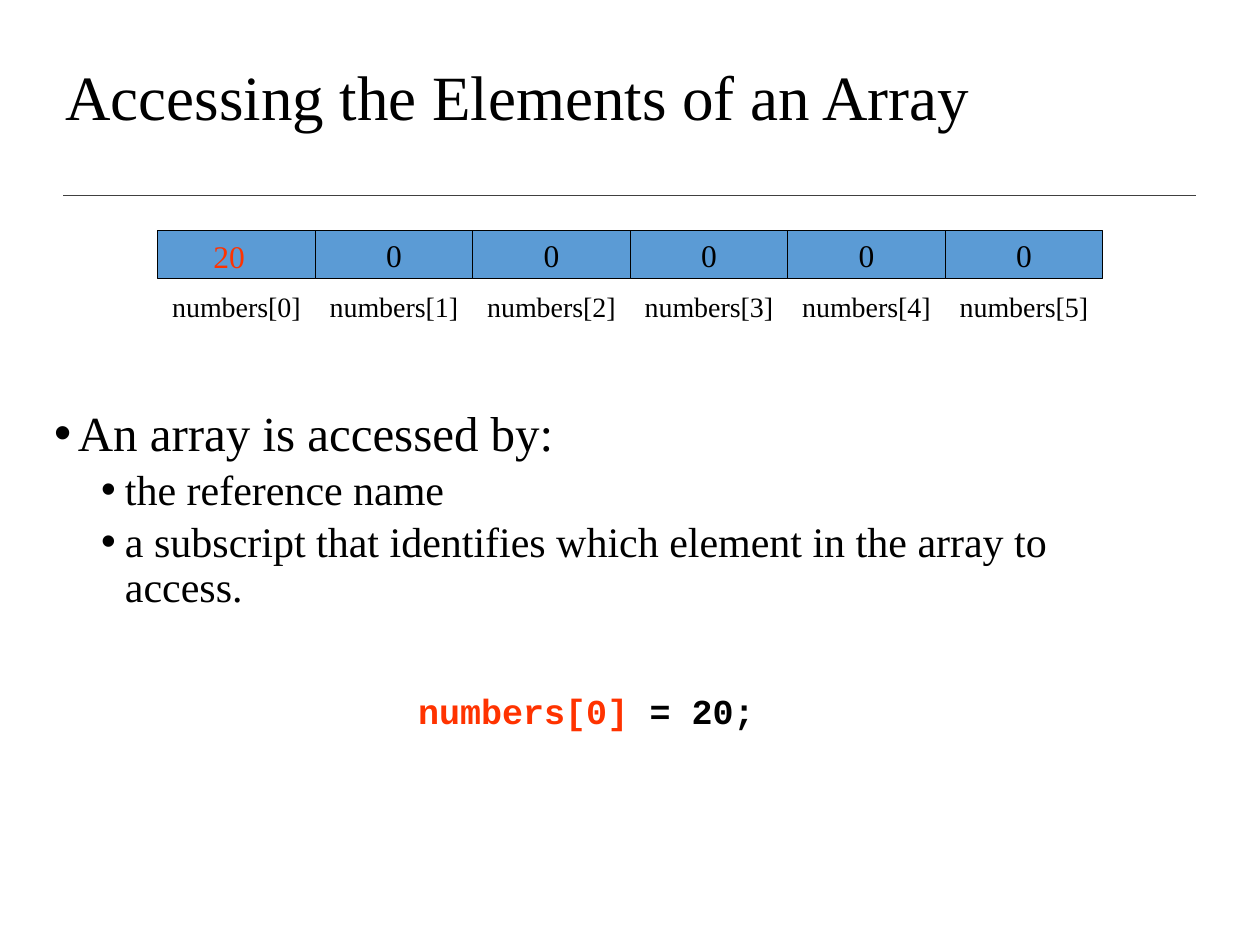
import pptx
import pptx.dml.color
import pptx.enum.shapes
import pptx.enum.text
import pptx.oxml.xmlchemy
import pptx.util
from pptx.util import Cm

BLACK = pptx.dml.color.RGBColor(0x00, 0x00, 0x00)
GREY = pptx.dml.color.RGBColor(0x40, 0x40, 0x40)
BLUE = pptx.dml.color.RGBColor(0x5B, 0x9B, 0xD5)
RED = pptx.dml.color.RGBColor(0xFF, 0x33, 0x00)
SERIF = "Times New Roman"
MONO = "Courier New"
CENTER = pptx.enum.text.PP_ALIGN.CENTER
MIDDLE = pptx.enum.text.MSO_ANCHOR.MIDDLE


def add_span(para, text, size, color=BLACK, font=SERIF, bold=False):
    span = para.add_run()
    span.text = text
    span.font.size = pptx.util.Pt(size)
    span.font.name = font
    span.font.bold = bold
    span.font.color.rgb = color


def add_box(left, top, width, height, wrap=True, align=None):
    box = page.shapes.add_textbox(left, top, width, height)
    box.text_frame.word_wrap = wrap
    box.text_frame.paragraphs[0].alignment = align
    return box.text_frame


deck = pptx.Presentation()
deck.slide_width = Cm(25.4)
deck.slide_height = Cm(19.05)
page = deck.slides.add_slide(deck.slide_layouts[6])

# Title and the rule under it
title = add_box(Cm(1.07), Cm(0.43), Cm(21.59), Cm(3.18))
title.vertical_anchor = MIDDLE
title.paragraphs[0].line_spacing = 0.9
add_span(title.paragraphs[0], "Accessing the Elements of an Array", 36)

rule = page.shapes.add_connector(
    pptx.enum.shapes.MSO_CONNECTOR.STRAIGHT, Cm(1.27), Cm(3.94), Cm(24.1), Cm(3.94))
rule.line.color.rgb = GREY
rule.line.width = pptx.util.Pt(1)
rule._element.spPr.append(pptx.oxml.xmlchemy.OxmlElement("a:effectLst"))

# Array cells with their labels; the first value is the one assigned below
values = ["", "0", "0", "0", "0", "0"]
row_left = Cm(3.18)
cell_width = Cm(19.05) // len(values)
for index, value in enumerate(values):
    left = row_left + index * cell_width
    cell = page.shapes.add_shape(
        pptx.enum.shapes.MSO_SHAPE.RECTANGLE, left, Cm(4.65), cell_width, Cm(0.97))
    cell.shadow.inherit = False
    cell.fill.solid()
    cell.fill.fore_color.rgb = BLUE
    cell.line.color.rgb = BLACK
    cell.line.width = pptx.util.Pt(0.75)
    if value:
        cell.text_frame.word_wrap = False
        cell.text_frame.vertical_anchor = MIDDLE
        cell.text_frame.paragraphs[0].alignment = CENTER
        add_span(cell.text_frame.paragraphs[0], value, 18)
    label = add_box(left, Cm(5.72), cell_width, Cm(0.94), align=CENTER)
    add_span(label.paragraphs[0], f"numbers[{index}]", 16)

assigned = add_box(Cm(4.01), Cm(4.65), Cm(1.22), Cm(1.02), align=CENTER)
add_span(assigned.paragraphs[0], "20", 18, RED)

# Bulleted explanation: text, level, size, space before, left margin
points = [
    ("An array is accessed by:", 0, 28, 7.5, Cm(0.48)),
    ("the reference name", 1, 24, 3.8, Cm(1.43)),
    ("a subscript that identifies which element in the array to access.",
     1, 24, 3.8, Cm(1.43)),
]
body = add_box(Cm(0.84), Cm(8.13), Cm(23.04), Cm(9.02))
for number, (text, level, size, space, margin) in enumerate(points):
    para = body.add_paragraph() if number else body.paragraphs[0]
    para.level = level
    para.line_spacing = 0.9
    para.space_before = pptx.util.Pt(space)
    add_span(para, text, size)
    properties = para._p.get_or_add_pPr()
    properties.set("marL", str(int(margin)))
    properties.set("indent", str(-int(Cm(0.48))))
    font = pptx.oxml.xmlchemy.OxmlElement("a:buFont")
    font.set("typeface", "Arial")
    bullet = pptx.oxml.xmlchemy.OxmlElement("a:buChar")
    bullet.set("char", "•")
    properties.extend([font, bullet])

# Assignment statement
code = add_box(Cm(8.15), Cm(13.77), Cm(7.77), Cm(1.12), wrap=False, align=CENTER)
add_span(code.paragraphs[0], "numbers[0]", 20, RED, MONO, True)
add_span(code.paragraphs[0], " = 20; ", 20, BLACK, MONO, True)

deck.save("out.pptx")
